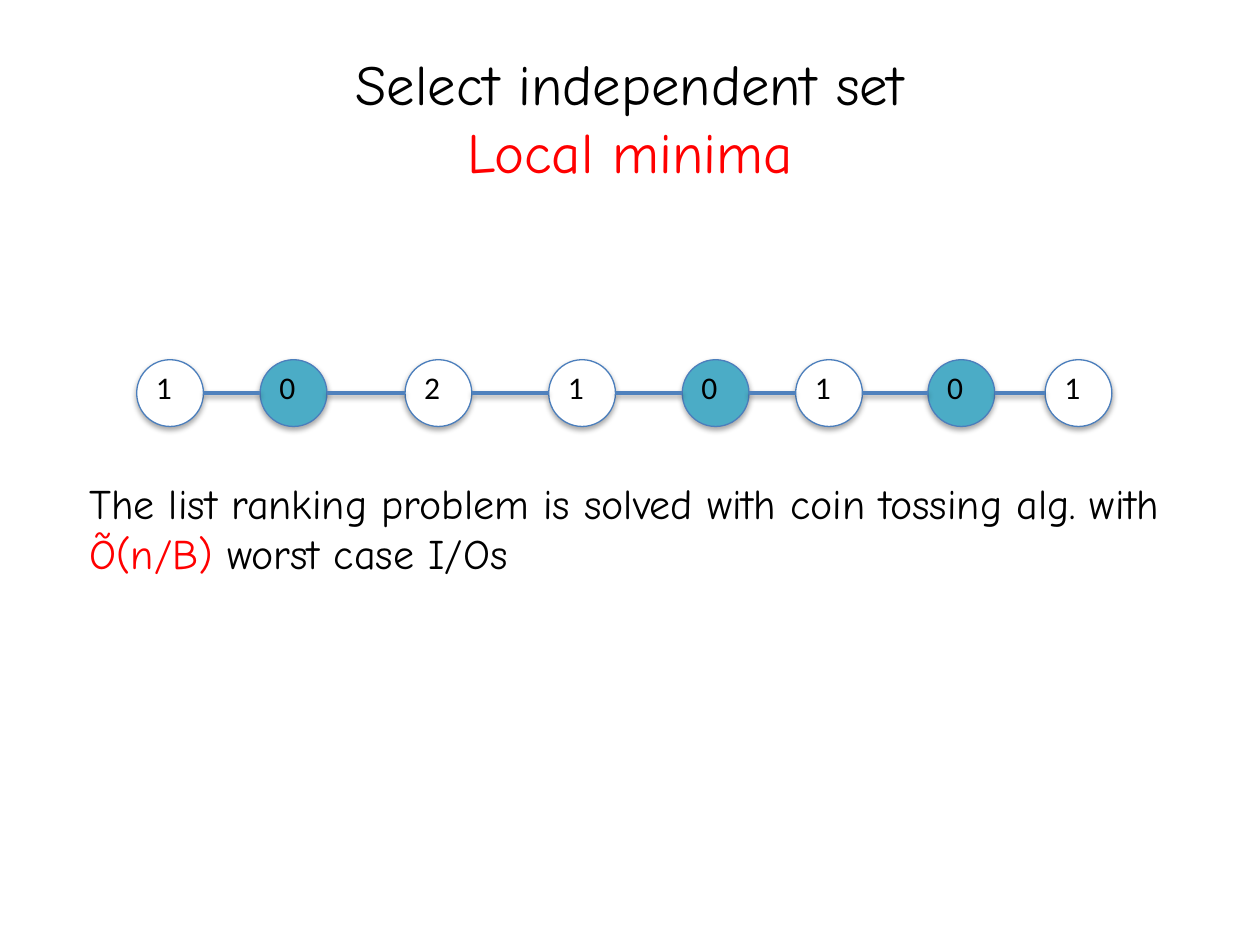
from itertools import pairwise
from pptx import Presentation
from pptx.dml.color import RGBColor
from pptx.enum.shapes import MSO_CONNECTOR, MSO_SHAPE
from pptx.enum.text import MSO_ANCHOR, MSO_AUTO_SIZE, PP_ALIGN
from pptx.util import Inches, Pt

OVAL, LINE = MSO_SHAPE.OVAL, MSO_CONNECTOR.STRAIGHT
MID, CENTER, FIXED = MSO_ANCHOR.MIDDLE, PP_ALIGN.CENTER, MSO_AUTO_SIZE.NONE

# Content
TITLE = [("Select independent set\v", "ink"), ("Local minima", "red")]
BODY = [("The list ranking problem is solved with coin tossing alg. with ", "ink"),
        ("Õ(n/B)", "red"), (" worst case I/Os", "ink")]
# Each node: label, centre in inches, whether it is a local minimum
NODES = [("1", 1.35, False), ("0", 2.33, True), ("2", 3.48, False),
         ("1", 4.62, False), ("0", 5.68, True), ("1", 6.58, False),
         ("0", 7.63, True), ("1", 8.56, False)]
ROW, SIZE = 3.12, 0.53

THEME = {
    "ink": RGBColor(0, 0, 0), "red": RGBColor(255, 0, 0),
    "plain": RGBColor(255, 255, 255), "chosen": RGBColor(0x4B, 0xAC, 0xC6),
    "rim": RGBColor(0x4B, 0x7E, 0xBC), "link": RGBColor(0x4F, 0x81, 0xBD),
    "font": "Comic Neue", "digit": "Calibri",
    "title": Pt(32.4), "body": Pt(24), "label": Pt(18),
}


def place(shape, *box):
    shape.left, shape.top, shape.width, shape.height = map(Inches, box)


def write(frame, runs, size):
    frame.auto_size = FIXED
    para = frame.paragraphs[0]
    para.font.name, para.font.size = THEME["font"], size
    for words, color in runs:
        # A vertical tab stands for a line break
        run = para.add_run()
        run.text = words.rstrip("\v")
        run.font.color.rgb = THEME[color]
        if words.endswith("\v"):
            para.add_line_break()
    return para


def add_node(slide, label, mid, chosen):
    node = slide.shapes.add_shape(
        OVAL, Inches(mid - SIZE / 2), Inches(ROW - SIZE / 2),
        Inches(SIZE), Inches(SIZE))
    node.fill.solid()
    node.fill.fore_color.rgb = THEME["chosen" if chosen else "plain"]
    node.line.color.rgb = THEME["rim"]
    node.line.width = Pt(0.75)
    frame = node.text_frame
    frame.word_wrap = False
    frame.vertical_anchor = MID
    frame.margin_left = frame.margin_top = 0
    frame.margin_right = frame.margin_bottom = Inches(0.1)
    para = frame.paragraphs[0]
    para.text, para.alignment = label, CENTER
    para.font.name, para.font.size = THEME["digit"], THEME["label"]
    para.font.color.rgb = THEME["ink"]
    return node


def add_link(slide, start, end):
    link = slide.shapes.add_connector(
        LINE, start.left + start.width, Inches(ROW), end.left, Inches(ROW))
    link.line.color.rgb = THEME["link"]
    link.line.width = Pt(2)


def main():
    deck = Presentation()
    deck.slide_width, deck.slide_height = Inches(10), Inches(7.5)
    slide = deck.slides.add_slide(deck.slide_layouts[1])
    title, body = slide.placeholders

    # Title and statement
    place(title, 0.5, 0.3, 9, 1.25)
    title.text_frame.vertical_anchor = MID
    write(title.text_frame, TITLE, THEME["title"]).alignment = CENTER
    place(body, 0.61, 3.74, 9, 2.76)
    para = write(body.text_frame, BODY, THEME["body"])
    para.space_before = Pt(0)
    props = para._p.get_or_add_pPr()
    props.set("marL", "0")
    props.set("indent", "0")
    props.insert_element_before(
        props.makeelement("{http://schemas.openxmlformats.org/drawingml/2006/main}buNone"),
        "a:tabLst", "a:defRPr", "a:extLst")

    # Linked list; nodes and links keep the theme's soft shadow
    nodes = [add_node(slide, *node) for node in NODES]
    for start, end in pairwise(nodes):
        add_link(slide, start, end)

    deck.save("out.pptx")


if __name__ == "__main__":
    main()
